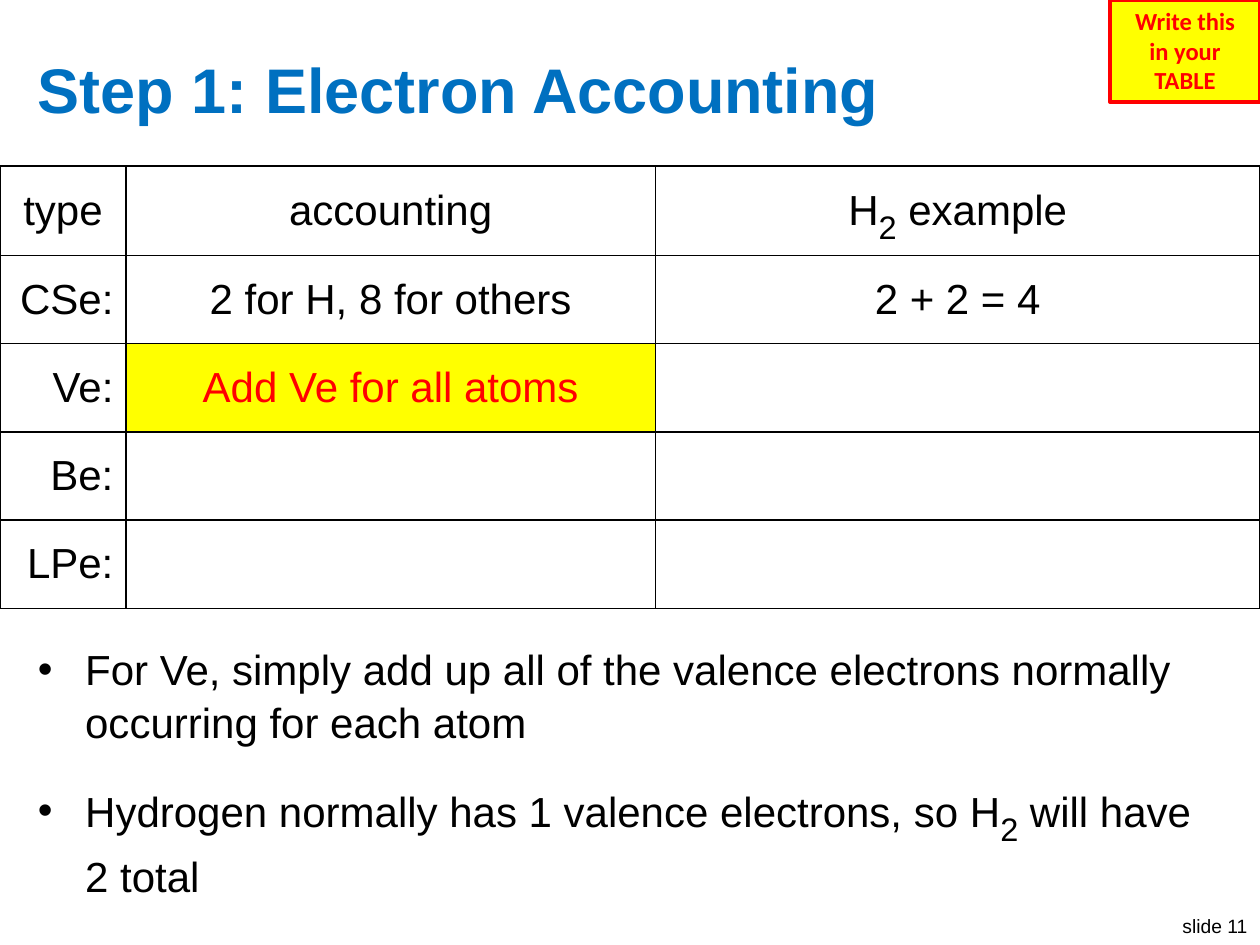
from dataclasses import dataclass

from lxml.etree import SubElement
from pptx import Presentation
from pptx.dml.color import RGBColor
from pptx.enum.shapes import MSO_SHAPE
from pptx.enum.text import MSO_ANCHOR, MSO_AUTO_SIZE, PP_ALIGN
from pptx.oxml.ns import qn
from pptx.util import Cm, Pt

BLACK = RGBColor(0x00, 0x00, 0x00)
WHITE = RGBColor(0xFF, 0xFF, 0xFF)
BLUE = RGBColor(0x00, 0x70, 0xC0)
RED = RGBColor(0xFF, 0x00, 0x00)
YELLOW = RGBColor(0xFF, 0xFF, 0x00)

SUBSCRIPT_MARK = "~"
COLUMN_WIDTHS = (2.54, 10.67, 12.19)
ROW_HEIGHT = 1.78


@dataclass(frozen=True)
class Box:
    left: float
    top: float
    width: float
    height: float

    def lengths(self) -> tuple:
        return Cm(self.left), Cm(self.top), Cm(self.width), Cm(self.height)


@dataclass(frozen=True)
class Style:
    size: float
    color: RGBColor = BLACK
    name: str = "Arial"
    bold: bool = False
    align: PP_ALIGN = PP_ALIGN.LEFT


@dataclass(frozen=True)
class Entry:
    text: str = ""
    align: PP_ALIGN = PP_ALIGN.CENTER
    color: RGBColor = BLACK
    fill: RGBColor = WHITE


@dataclass(frozen=True)
class AccountingRow:
    kind: Entry
    accounting: Entry = Entry()
    example: Entry = Entry()


def row_label(text: str) -> Entry:
    return Entry(text, PP_ALIGN.RIGHT)


ACCOUNTING_ROWS = (
    AccountingRow(Entry("type"), Entry("accounting"), Entry("H~2~ example")),
    AccountingRow(row_label("CSe:"), Entry("2 for H, 8 for others"), Entry("2 + 2 = 4")),
    AccountingRow(row_label("Ve:"), Entry("Add Ve for all atoms", color=RED, fill=YELLOW)),
    AccountingRow(row_label("Be:")),
    AccountingRow(row_label("LPe:")),
)
EXPLANATIONS = (
    "For Ve, simply add up all of the valence electrons normally occurring for each atom",
    "Hydrogen normally has 1 valence electrons, so H~2~ will have 2 total",
)


def write(paragraph, text: str, style: Style) -> None:
    paragraph.alignment = style.align
    font = paragraph.font
    font.name, font.size, font.bold = style.name, Pt(style.size), style.bold
    font.color.rgb = style.color
    for index, part in enumerate(text.split(SUBSCRIPT_MARK)):
        run = paragraph.add_run()
        run.text = part
        if index % 2:
            run.font.size = Pt(32)
            run._r.get_or_add_rPr().set("baseline", "-25000")


def write_all(frame, texts: tuple, style: Style) -> None:
    for index, text in enumerate(texts):
        paragraph = frame.add_paragraph() if index else frame.paragraphs[0]
        write(paragraph, text, style)


def place(shape, box: Box) -> None:
    shape.left, shape.top, shape.width, shape.height = box.lengths()


def add_borders(cell) -> None:
    properties = cell._tc.get_or_add_tcPr()
    for side in ("a:lnL", "a:lnR", "a:lnT", "a:lnB"):
        line = SubElement(properties, qn(side), w=str(Pt(1)))
        SubElement(SubElement(line, qn("a:solidFill")), qn("a:srgbClr"), val=str(BLACK))


def fill_cell(cell, entry: Entry) -> None:
    cell.vertical_anchor = MSO_ANCHOR.MIDDLE
    add_borders(cell)
    cell.fill.solid()
    cell.fill.fore_color.rgb = entry.fill
    if entry.text:
        write(cell.text_frame.paragraphs[0], entry.text,
              Style(24, entry.color, align=entry.align))


def add_title(slide) -> None:
    title = slide.shapes.title
    place(title, Box(0.51, 0.76, 24.38, 2.03))
    title.text_frame.vertical_anchor = MSO_ANCHOR.MIDDLE
    title.text_frame.auto_size = MSO_AUTO_SIZE.NONE
    write(title.text_frame.paragraphs[0], "Step 1: Electron Accounting",
          Style(36, BLUE, bold=True))


def add_explanations(slide) -> None:
    body = slide.placeholders[1]
    place(body, Box(0.51, 12.8, 24.38, 5.64))
    frame = body.text_frame
    frame.auto_size = MSO_AUTO_SIZE.NONE
    write_all(frame, EXPLANATIONS, Style(24))
    for paragraph in frame.paragraphs:
        paragraph.space_before = Pt(12)
        paragraph.line_spacing = 1.05


def add_accounting_table(slide) -> None:
    box = Box(0, 3.35, sum(COLUMN_WIDTHS), ROW_HEIGHT * len(ACCOUNTING_ROWS))
    table = slide.shapes.add_table(
        len(ACCOUNTING_ROWS), len(COLUMN_WIDTHS), *box.lengths()).table
    for column, width in zip(table.columns, COLUMN_WIDTHS):
        column.width = Cm(width)
    for table_row, row in zip(table.rows, ACCOUNTING_ROWS):
        table_row.height = Cm(ROW_HEIGHT)
        for cell, entry in zip(table_row.cells, (row.kind, row.accounting, row.example)):
            fill_cell(cell, entry)


def add_reminder(slide) -> None:
    reminder = slide.shapes.add_shape(
        MSO_SHAPE.RECTANGLE, *Box(22.38, 0, 3.02, 2.06).lengths())
    reminder.shadow.inherit = False
    reminder.fill.solid()
    reminder.fill.fore_color.rgb = YELLOW
    reminder.line.color.rgb = RED
    reminder.line.width = Pt(2.25)
    frame = reminder.text_frame
    frame.word_wrap = True
    frame.vertical_anchor = MSO_ANCHOR.TOP
    write_all(frame, ("Write this", "in your TABLE"),
              Style(14, RED, "Calibri", True, PP_ALIGN.CENTER))


def add_slide_number(slide) -> None:
    number = slide.shapes.add_textbox(*Box(23.5, 18.31, 1.9, 0.74).lengths())
    number.text_frame.word_wrap = False
    write(number.text_frame.paragraphs[0], "slide 11", Style(11, align=PP_ALIGN.RIGHT))


def main() -> None:
    presentation = Presentation()
    presentation.slide_width, presentation.slide_height = Cm(25.4), Cm(19.05)
    slide = presentation.slides.add_slide(presentation.slide_layouts[1])
    add_slide_number(slide)
    add_title(slide)
    add_explanations(slide)
    add_accounting_table(slide)
    add_reminder(slide)
    presentation.save("out.pptx")


if __name__ == "__main__":
    main()
